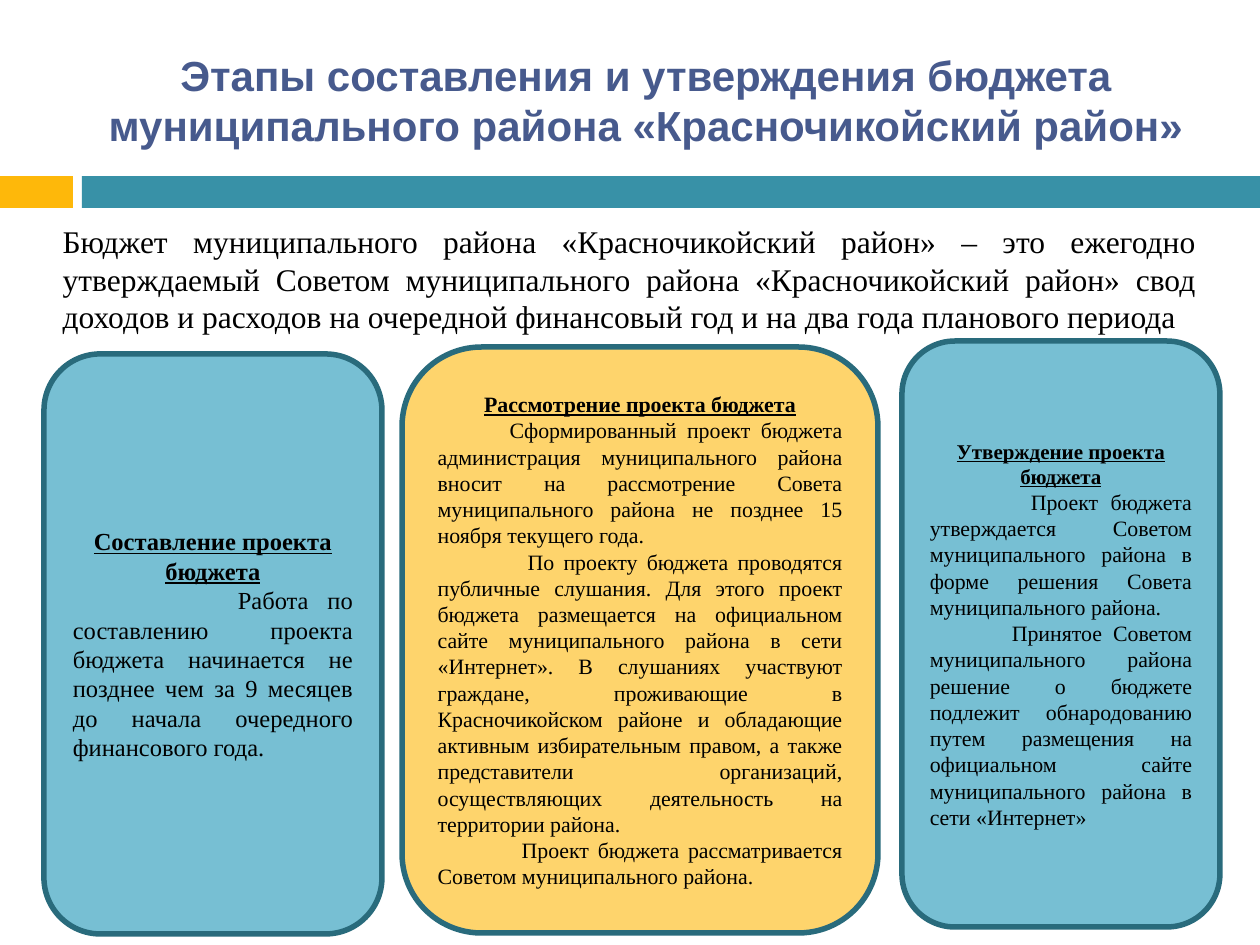
from pptx import Presentation
from pptx.dml.color import RGBColor
from pptx.enum.shapes import MSO_SHAPE
from pptx.enum.text import MSO_ANCHOR, PP_ALIGN
from pptx.util import Pt

PX = 914400 // 126  # EMU per px
WHITE = RGBColor(0xFF, 0xFF, 0xFF)
BLACK = RGBColor(0, 0, 0)
ORANGE = RGBColor(0xFE, 0xB8, 0x0A)
TEAL = RGBColor(0x38, 0x91, 0xA7)
DARK_TEAL = RGBColor(0x29, 0x6B, 0x7C)
LIGHT_TEAL = RGBColor(0x77, 0xBF, 0xD3)
YELLOW = RGBColor(0xFE, 0xD4, 0x6C)
TITLE_BLUE = RGBColor(0x47, 0x5A, 0x8D)
SERIF = "Times New Roman"

TITLE = ("Этапы составления и утверждения бюджета муниципального района "
         "«Красночикойский район»")
INTRO = ("Бюджет муниципального района «Красночикойский район» – это ежегодно "
         "утверждаемый Советом муниципального района «Красночикойский район» свод "
         "доходов и расходов на очередной финансовый год и на два года планового периода")

# Each stage: box, fill, heading, heading size, body size, (indent, paragraph) list
STAGES = [
    ((44, 354, 338, 580), LIGHT_TEAL, "Составление проекта бюджета", 14, 14, [
        (165, "Работа по составлению проекта бюджета начинается не позднее чем "
              "за 9 месяцев до начала очередного финансового года."),
    ]),
    ((402, 347, 476, 586), YELLOW, "Рассмотрение проекта бюджета", 12.5, 12.5, [
        (72, "Сформированный проект бюджета администрация муниципального района "
             "вносит на рассмотрение Совета муниципального района не позднее "
             "15 ноября текущего года."),
        (90, "По проекту бюджета проводятся публичные слушания. Для этого проект "
             "бюджета размещается на официальном сайте муниципального района в сети "
             "«Интернет». В слушаниях участвуют граждане, проживающие в "
             "Красночикойском районе и обладающие активным избирательным правом, "
             "а также представители организаций, осуществляющих деятельность на "
             "территории района."),
        (84, "Проект бюджета рассматривается Советом муниципального района."),
    ]),
    ((902, 341, 318, 586), LIGHT_TEAL, "Утверждение проекта бюджета", 12, 12.5, [
        (101, "Проект бюджета утверждается Советом муниципального района в форме "
              "решения Совета муниципального района."),
        (82, "Принятое Советом муниципального района решение о бюджете подлежит "
             "обнародованию путем размещения на официальном сайте муниципального "
             "района в сети «Интернет»"),
    ]),
]


def emu(box):
    return [v * PX for v in box]


def add_box(slide, kind, box, fill, line=None):
    s = slide.shapes.add_shape(kind, *emu(box))
    s.shadow.inherit = False
    s.fill.solid()
    s.fill.fore_color.rgb = fill
    if line is None:
        s.line.fill.background()
    else:
        s.line.color.rgb = line
        s.line.width = Pt(3.15)
    return s


def prepare_frame(s):
    tf = s.text_frame
    tf.word_wrap = True
    tf.vertical_anchor = MSO_ANCHOR.MIDDLE
    return tf


def write(p, text, size, align=PP_ALIGN.JUSTIFY, font=SERIF, color=BLACK,
          bold=False, underline=False, indent=0):
    p.text = text
    p.alignment = align
    if indent:
        p._p.get_or_add_pPr().set("indent", str(indent * PX))
    f = p.runs[0].font
    f.name, f.size, f.bold, f.underline = font, Pt(size), bold, underline
    f.color.rgb = color


def add_title(slide):
    tf = prepare_frame(slide.shapes.add_textbox(*emu((84, 32, 1124, 136))))
    write(tf.paragraphs[0], TITLE, 24, PP_ALIGN.CENTER, "Arial", TITLE_BLUE, bold=True)


def add_intro(slide):
    s = add_box(slide, MSO_SHAPE.ROUNDED_RECTANGLE, (44, 214, 1171, 129), WHITE, WHITE)
    write(prepare_frame(s).paragraphs[0], INTRO, 18)


def add_stage(slide, box, fill, heading, heading_size, body_size, body):
    s = add_box(slide, MSO_SHAPE.ROUNDED_RECTANGLE, box, fill, DARK_TEAL)
    tf = prepare_frame(s)
    write(tf.paragraphs[0], heading, heading_size, PP_ALIGN.CENTER,
          bold=True, underline=True)
    for indent, text in body:
        write(tf.add_paragraph(), text, body_size, indent=indent)


def main():
    prs = Presentation()
    prs.slide_width, prs.slide_height = emu((1260, 945))
    slide = prs.slides.add_slide(prs.slide_layouts[6])

    # Heading and divider band
    add_box(slide, MSO_SHAPE.RECTANGLE, (0, 176, 73, 32), ORANGE)
    add_box(slide, MSO_SHAPE.RECTANGLE, (82, 176, 1178, 32), TEAL)
    add_title(slide)

    # Definition and the three stages
    add_intro(slide)
    for stage in STAGES:
        add_stage(slide, *stage)

    prs.save("out.pptx")


if __name__ == "__main__":
    main()
